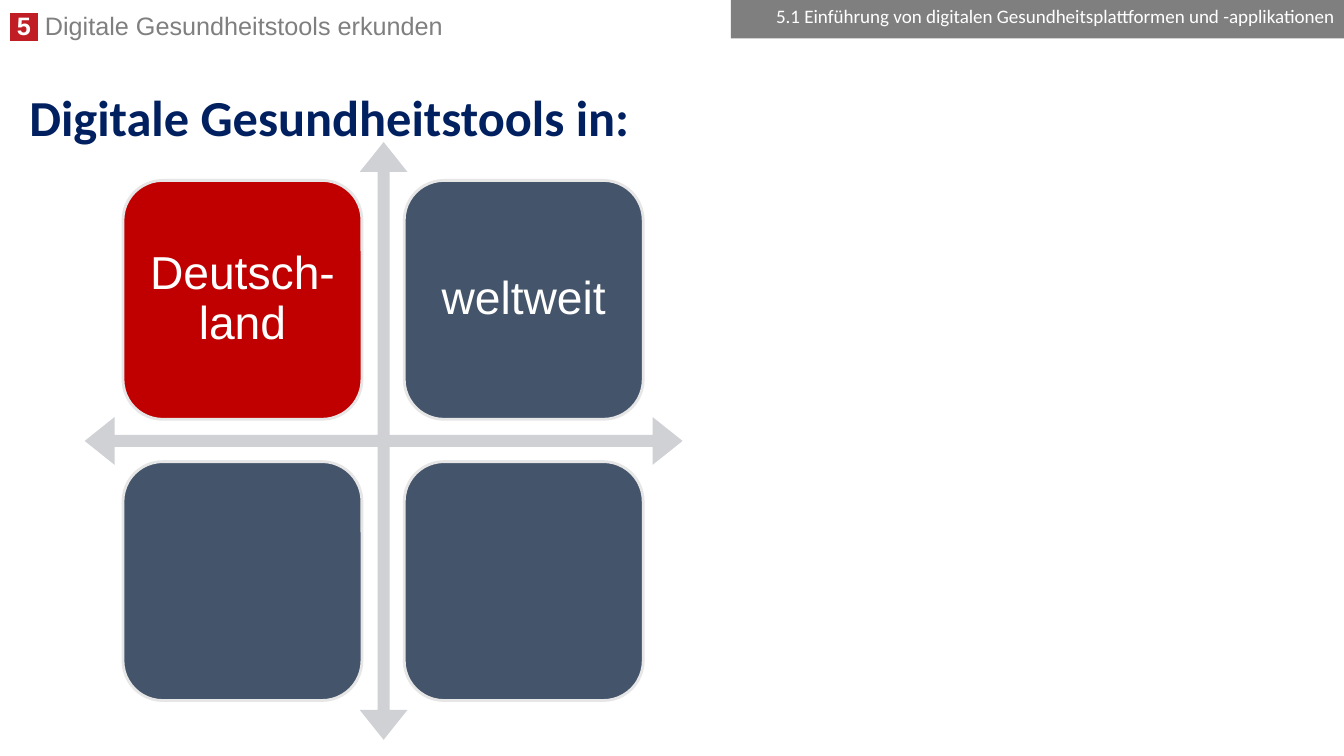
from dataclasses import dataclass

from lxml import etree
from pptx import Presentation
from pptx import util as u
from pptx.dml.color import RGBColor
from pptx.enum import shapes, text
from pptx.oxml import ns


@dataclass(frozen=True)
class Theme:
    white: str = "FFFFFF"
    grey: str = "7F7F7F"
    navy: str = "002060"
    badge: str = "C01E24"
    red: str = "C00000"
    slate: str = "44546A"
    arrow: str = "CFD1D4"
    outline: str = "E7E6E6"
    sans: str = "Arial"
    heading: str = "Calibri"
    title_size: float = 36
    tile_size: float = 33
    chapter_size: float = 18
    section_size: float = 13.6


THEME = Theme()
TITLE_ONLY = 5


def set_highlight(span, color):
    """Mark the run's background; its font colour must already be set."""
    fill = span.font._element.find(ns.qn("a:solidFill"))
    highlight = etree.Element(ns.qn("a:highlight"))
    etree.SubElement(highlight, ns.qn("a:srgbClr"), val=color)
    fill.addnext(highlight)


def add_span(para, words, size, color, font=THEME.sans, bold=False, highlight=None):
    span = para.add_run()
    span.text = words
    span.font.size = u.Pt(size)
    span.font.name = font
    span.font.bold = bold
    span.font.color.rgb = RGBColor.from_string(color)
    if highlight:
        set_highlight(span, highlight)


def write(box, words, align=text.PP_ALIGN.LEFT, anchor=text.MSO_ANCHOR.MIDDLE,
          spacing=0.9, margins=(0.1, 0.05), **span_format):
    """Write one paragraph into a shape and return it for further runs."""
    frame = box.text_frame
    frame.word_wrap = True
    frame.auto_size = text.MSO_AUTO_SIZE.NONE
    frame.vertical_anchor = anchor
    frame.margin_left = frame.margin_right = u.Inches(margins[0])
    frame.margin_top = frame.margin_bottom = u.Inches(margins[1])
    para = frame.paragraphs[0]
    para.alignment = align
    para.line_spacing = spacing
    add_span(para, words, **span_format)
    return para


def add_filled(page, kind, place, fill, outline=None):
    shape = page.shapes.add_shape(kind, *map(u.Inches, place))
    shape.shadow.inherit = False
    shape.fill.solid()
    shape.fill.fore_color.rgb = RGBColor.from_string(fill)
    if outline:
        shape.line.color.rgb = RGBColor.from_string(outline)
        shape.line.width = u.Pt(2)
    else:
        shape.line.fill.background()
    return shape


def add_chapter(page, number, name):
    box = page.shapes.add_textbox(*map(u.Inches, (0, 0.11, 9.52, 0.35)))
    para = write(box, f" {number} ", anchor=text.MSO_ANCHOR.TOP, spacing=0.8,
                 size=THEME.chapter_size, color=THEME.white, bold=True,
                 highlight=THEME.badge)
    add_span(para, f" {name}", THEME.chapter_size, THEME.grey)


def add_title(page, words):
    title = page.shapes.title
    title.left, title.top, title.width, title.height = map(
        u.Inches, (0.19, 0.86, 12.1, 0.66))
    write(title, words, size=THEME.title_size, color=THEME.navy,
          font=THEME.heading, bold=True)


def add_matrix(page, tiles):
    """Draw the crossed arrows and a two-column grid of (words, fill) tiles."""
    cross = add_filled(page, shapes.MSO_SHAPE.QUAD_ARROW,
                       (0.84, 1.41, 5.93, 5.93), THEME.arrow)
    for index, value in enumerate((0.02, 0.04, 0.05)):
        cross.adjustments[index] = value

    left, top, side, pitch = 1.22, 1.79, 2.37, 2.79
    for index, (words, fill) in enumerate(tiles):
        row, column = divmod(index, 2)
        place = (left + column * pitch, top + row * pitch, side, side)
        tile = add_filled(page, shapes.MSO_SHAPE.ROUNDED_RECTANGLE, place,
                          fill, THEME.outline)
        if words:
            write(tile, words, align=text.PP_ALIGN.CENTER, margins=(0.14, 0.14),
                  size=THEME.tile_size, color=THEME.white)


def add_section(page, words):
    banner = add_filled(page, shapes.MSO_SHAPE.RECTANGLE,
                        (7.25, 0, 6.08, 0.38), THEME.grey)
    write(banner, words, align=text.PP_ALIGN.RIGHT, spacing=0.7,
          size=THEME.section_size, color=THEME.white, font=THEME.heading)


def main():
    deck = Presentation()
    deck.slide_width = u.Inches(13.33)
    deck.slide_height = u.Inches(7.5)
    page = deck.slides.add_slide(deck.slide_layouts[TITLE_ONLY])

    add_chapter(page, 5, "Digitale Gesundheitstools erkunden")
    add_title(page, "Digitale Gesundheitstools in:")
    add_matrix(page, [
        ("Deutsch-land", THEME.red),
        ("weltweit", THEME.slate),
        ("", THEME.slate),
        ("", THEME.slate),
    ])
    add_section(page, "5.1 Einführung von digitalen Gesundheitsplattformen "
                      "und -applikationen")
    deck.save("out.pptx")


if __name__ == "__main__":
    main()
